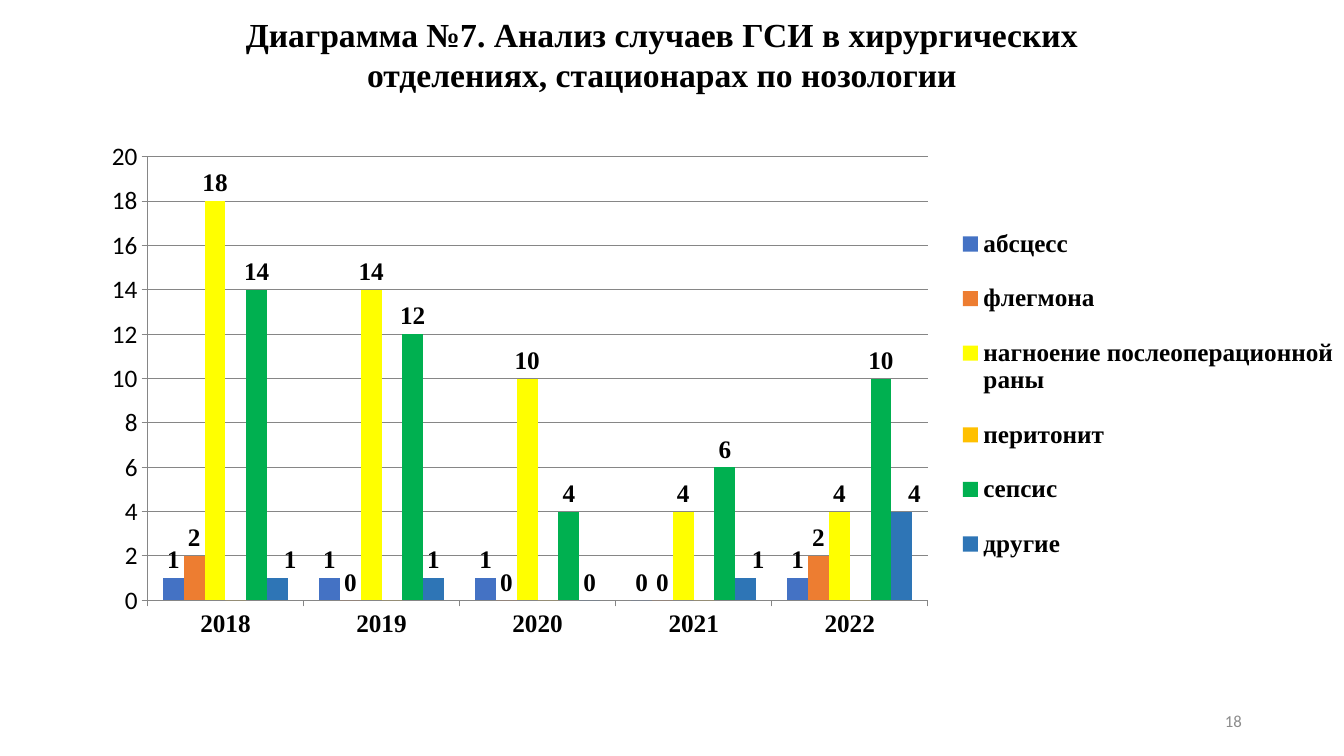
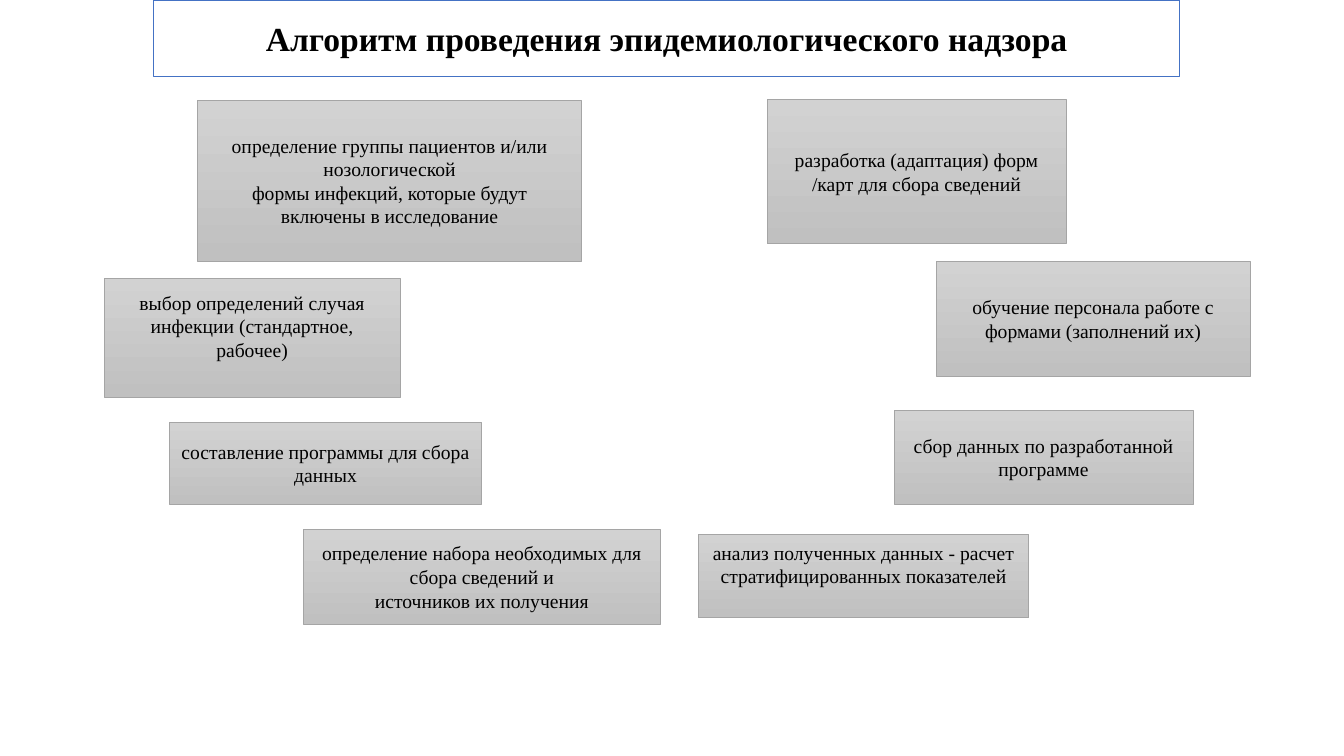
import pptx
import pptx.chart.data
import pptx.dml.color
import pptx.enum.chart
import pptx.enum.shapes
import pptx.enum.text
import pptx.oxml
import pptx.oxml.ns
import pptx.util

Cm = pptx.util.Cm
Pt = pptx.util.Pt
ALIGN = pptx.enum.text.PP_ALIGN
ANCHOR = pptx.enum.text.MSO_ANCHOR
CHART = pptx.enum.chart


class Deck:
    """Holds the shared style and draws elements on the current slide."""

    COLORS = {
        "text": "000000", "white": "FFFFFF", "accent": "4472C4",
        "number": "8C8C8C", "grid": "868686", "box_line": "A5A5A5",
        "box_top": "D2D2D2", "box_bottom": "C0C0C0",
        "orange": "ED7D31", "yellow": "FFFF00", "gold": "FFC000",
        "green": "00B050", "blue": "2E75B6",
    }
    SERIF = "Times New Roman"
    SANS = "Calibri"

    def __init__(self):
        self.presentation = pptx.Presentation()
        self.presentation.slide_width = Cm(33.87)
        self.presentation.slide_height = Cm(19.05)
        self.slide = None

    def new_slide(self):
        layout = self.presentation.slide_layouts[6]
        self.slide = self.presentation.slides.add_slide(layout)

    def color(self, name):
        return pptx.dml.color.RGBColor.from_string(self.COLORS[name])

    def style_font(self, font, size, bold=False, name=SERIF, color="text"):
        font.size = Pt(size)
        font.bold = bold
        font.name = name
        font.color.rgb = self.color(color)

    def set_text(self, shape, lines, size, align=ALIGN.CENTER, anchor=ANCHOR.MIDDLE, **style):
        frame = shape.text_frame
        frame.word_wrap = True
        frame.vertical_anchor = anchor
        paragraph = frame.paragraphs[0]
        paragraph.alignment = align
        for index, line in enumerate(lines):
            if index:
                paragraph.add_line_break()
            run = paragraph.add_run()
            run.text = line
            self.style_font(run.font, size, **style)

    def text(self, place, line, size, **style):
        shape = self.slide.shapes.add_textbox(*map(Cm, place))
        self.set_text(shape, [line], size, **style)

    def rectangle(self, place, line_color, line_width):
        kind = pptx.enum.shapes.MSO_SHAPE.RECTANGLE
        shape = self.slide.shapes.add_shape(kind, *map(Cm, place))
        shape.shadow.inherit = False
        shape.line.color.rgb = self.color(line_color)
        shape.line.width = Pt(line_width)
        return shape

    def title_box(self, place, line):
        shape = self.rectangle(place, "accent", 1)
        shape.fill.solid()
        shape.fill.fore_color.rgb = self.color("white")
        self.set_text(shape, [line], 24, bold=True)

    def step(self, place, lines, bottom=0.13):
        shape = self.rectangle(place, "box_line", 0.5)
        shape.fill.gradient()
        shape.fill.gradient_angle = 270
        for stop, name in zip(shape.fill.gradient_stops, ("box_top", "box_bottom")):
            stop.color.rgb = self.color(name)
        shape.text_frame.margin_bottom = Cm(bottom)
        self.set_text(shape, lines, 14)

    def set_layout(self, parent, index, values, target=""):
        for old in parent.xpath("./c:layout"):
            parent.remove(old)
        modes = '<c:xMode val="edge"/><c:yMode val="edge"/>' if "w" in values else ""
        parts = "".join(f'<c:{key} val="{value}"/>' for key, value in values.items())
        namespace = pptx.oxml.ns.nsdecls("c")
        xml = f"<c:layout {namespace}><c:manualLayout>{target}{modes}{parts}</c:manualLayout></c:layout>"
        parent.insert(index, pptx.oxml.parse_xml(xml))

    def column_chart(self, place, categories, series_rows, label_shifts):
        data = pptx.chart.data.CategoryChartData()
        data.categories = categories
        for name, _, values, _ in series_rows:
            data.add_series(name, values)
        frame = self.slide.shapes.add_chart(
            CHART.XL_CHART_TYPE.COLUMN_CLUSTERED, *map(Cm, place), data)
        chart = frame.chart
        chart.has_title = False
        self.style_font(chart.font, 18, name=self.SANS)
        plot = chart.plots[0]
        plot.gap_width = 150
        plot.overlap = 0
        plot.vary_by_categories = False
        for series, (name, color, _, labelled) in zip(plot.series, series_rows):
            series.format.fill.solid()
            series.format.fill.fore_color.rgb = self.color(color)
            if labelled:
                self.label_series(chart, series, label_shifts.get(name, {}))
        self.style_axes(chart)
        chart.has_legend = True
        chart.legend.position = CHART.XL_LEGEND_POSITION.RIGHT
        chart.legend.include_in_layout = False
        self.style_font(chart.legend.font, 18, bold=True)
        self.set_layout(chart.element.xpath(".//c:plotArea")[0], 0,
                        {"x": 0.05, "y": 0.05, "w": 0.62, "h": 0.86},
                        '<c:layoutTarget val="inner"/>')
        self.set_layout(chart.element.xpath(".//c:legend")[0], 1,
                        {"x": 0.69, "y": 0.14, "w": 0.31, "h": 0.74})

    def style_labels(self, labels):
        labels.position = CHART.XL_LABEL_POSITION.OUTSIDE_END
        self.style_font(labels.font, 18, bold=True)

    def label_series(self, chart, series, shifts):
        series.data_labels.show_value = True
        self.style_labels(series.data_labels)
        for index, shift in shifts.items():
            self.style_labels(series.points[index].data_label)
            query = f".//c:ser[c:idx/@val='{series.index}']//c:dLbl[c:idx/@val='{index}']"
            self.set_layout(chart.element.xpath(query)[0], 1, {"x": shift, "y": 0})

    def style_axes(self, chart):
        for axis in (chart.category_axis, chart.value_axis):
            axis.major_tick_mark = CHART.XL_TICK_MARK.OUTSIDE
            axis.minor_tick_mark = CHART.XL_TICK_MARK.NONE
            axis.format.line.color.rgb = self.color("grid")
        self.style_font(chart.category_axis.tick_labels.font, 18, bold=True)
        self.style_font(chart.value_axis.tick_labels.font, 18, name=self.SANS)
        chart.value_axis.minimum_scale = 0
        chart.value_axis.maximum_scale = 20
        chart.value_axis.major_unit = 2
        chart.value_axis.has_major_gridlines = True
        chart.value_axis.major_gridlines.format.line.color.rgb = self.color("grid")


def build_chart_slide(deck):
    deck.new_slide()
    deck.text((3.61, 0.23, 26.14, 2.31),
              "Диаграмма №7. Анализ случаев ГСИ в хирургических отделениях, стационарах по нозологии",
              24, bold=True, anchor=ANCHOR.TOP)
    series_rows = [
        ("абсцесс", "accent", (1, 1, 1, 0, 1), True),
        ("флегмона", "orange", (2, 0, 0, 0, 2), True),
        ("нагноение послеоперационной раны", "yellow", (18, 14, 10, 4, 4), True),
        ("перитонит", "gold", (0, 0, 0, 0, 0), False),
        ("сепсис", "green", (14, 12, 4, 6, 10), True),
        ("другие", "blue", (1, 1, 0, 1, 4), True),
    ]
    years = [str(year) for year in range(2018, 2023)]
    label_shifts = {"другие": {0: 0.01, 3: 0.01, 4: 0.01}}
    deck.column_chart((2.13, 3.3, 31.72, 13), years, series_rows, label_shifts)
    deck.text((23.93, 17.65, 7.62, 1.02), "18", 12,
              align=ALIGN.RIGHT, name=deck.SANS, color="number")


def build_algorithm_slide(deck):
    deck.new_slide()
    deck.title_box((3.87, 0, 25.86, 1.93), "Алгоритм проведения эпидемиологического надзора")
    raised = 0.72
    steps = [
        ((4.98, 2.54, 9.68, 4.04),
         ["определение группы пациентов и/или нозологической",
          "формы инфекций, которые будут включены в исследование"]),
        ((2.62, 7.01, 7.47, 3),
         ["выбор определений случая инфекции (стандартное, рабочее)"], raised),
        ((4.27, 10.64, 7.87, 2.06), ["составление программы для сбора данных"]),
        ((7.65, 13.34, 8.99, 2.39),
         ["определение набора необходимых для сбора сведений и",
          "источников их получения"]),
        ((19.33, 2.51, 7.54, 3.63), ["разработка (адаптация) форм /карт для сбора сведений"]),
        ((23.6, 6.58, 7.9, 2.9), ["обучение персонала работе с формами (заполнений их)"]),
        ((22.53, 10.34, 7.54, 2.36), ["сбор данных по разработанной программе"]),
        ((17.6, 13.46, 8.33, 2.11),
         ["анализ полученных данных - расчет стратифицированных показателей"], raised),
    ]
    for step in steps:
        deck.step(*step)


def main():
    deck = Deck()
    build_chart_slide(deck)
    build_algorithm_slide(deck)
    deck.presentation.save("out.pptx")


if __name__ == "__main__":
    main()
